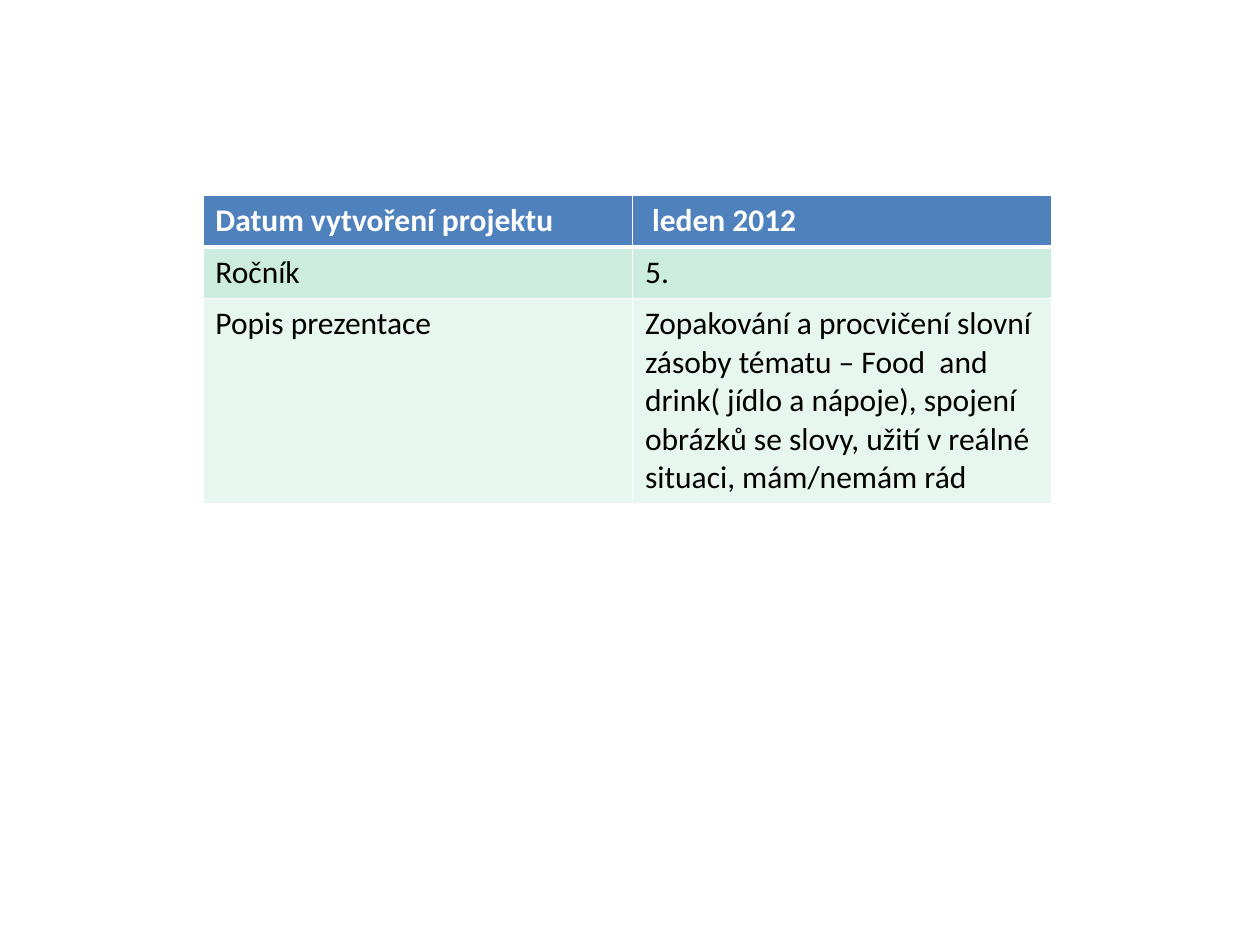
from typing import NamedTuple

from lxml import etree
from pptx import Presentation, util as u
from pptx.dml.color import RGBColor
from pptx.oxml.ns import qn

FONT = "Calibri"
WHITE, BLACK = "FFFFFF", "000000"
TABLE_LEFT, TABLE_TOP = 1.61, 1.55
COLUMN_WIDTHS = (3.41, 3.33)
THIN, THICK = 1, 3


class TableRow(NamedTuple):
    label: str
    value: str
    height: float
    fill: str
    color: str = BLACK
    bold: bool = False
    top: float = THIN
    bottom: float = THIN


ROWS = (
    TableRow("Datum vytvoření projektu", " leden 2012", 0.41, "4F81BD",
             color=WHITE, bold=True, bottom=THICK),
    TableRow("Ročník", "5.", 0.41, "CBECDE", top=THICK),
    TableRow("Popis prezentace",
             "Zopakování a procvičení slovní zásoby tématu – Food  and  drink( jídlo a nápoje), "
             "spojení obrázků se slovy, užití v reálné situaci, mám/nemám rád",
             1.59, "E7F6EF"),
)


def rgb(color: str) -> RGBColor:
    return RGBColor.from_string(color)


def write_text(frame, content: str, *, size: float = 18, color: str = BLACK,
               bold: bool = False) -> None:
    run = frame.paragraphs[0].add_run()
    run.text = content
    run.font.name = FONT
    run.font.size = u.Pt(size)
    run.font.bold = bold
    run.font.color.rgb = rgb(color)


def set_borders(cell, top: float, bottom: float, color: str = WHITE) -> None:
    """Put the four border lines ahead of the cell's fill, as the schema requires."""
    properties = cell._tc.get_or_add_tcPr()
    sides = (("L", THIN), ("R", THIN), ("T", top), ("B", bottom))
    for index, (side, width) in enumerate(sides):
        line = etree.Element(qn(f"a:ln{side}"), w=str(u.Pt(width)))
        fill = etree.SubElement(line, qn("a:solidFill"))
        etree.SubElement(fill, qn("a:srgbClr"), val=color)
        properties.insert(index, line)


def draw_table(slide, rows: tuple[TableRow, ...]) -> None:
    table = slide.shapes.add_table(
        len(rows), len(COLUMN_WIDTHS), u.Inches(TABLE_LEFT), u.Inches(TABLE_TOP),
        u.Inches(sum(COLUMN_WIDTHS)), u.Inches(sum(row.height for row in rows)),
    ).table
    for column, width in zip(table.columns, COLUMN_WIDTHS):
        column.width = u.Inches(width)
    for table_row, row in zip(table.rows, rows):
        table_row.height = u.Inches(row.height)
        for cell, content in zip(table_row.cells, (row.label, row.value)):
            cell.fill.solid()
            cell.fill.fore_color.rgb = rgb(row.fill)
            set_borders(cell, row.top, row.bottom)
            write_text(cell.text_frame, content, color=row.color, bold=row.bold)


def main() -> None:
    presentation = Presentation()
    presentation.slide_width, presentation.slide_height = u.Inches(10), u.Inches(7.5)
    blank_layout = presentation.slide_layouts[6]
    slide = presentation.slides.add_slide(blank_layout)
    draw_table(slide, ROWS)
    presentation.save("out.pptx")


if __name__ == "__main__":
    main()
